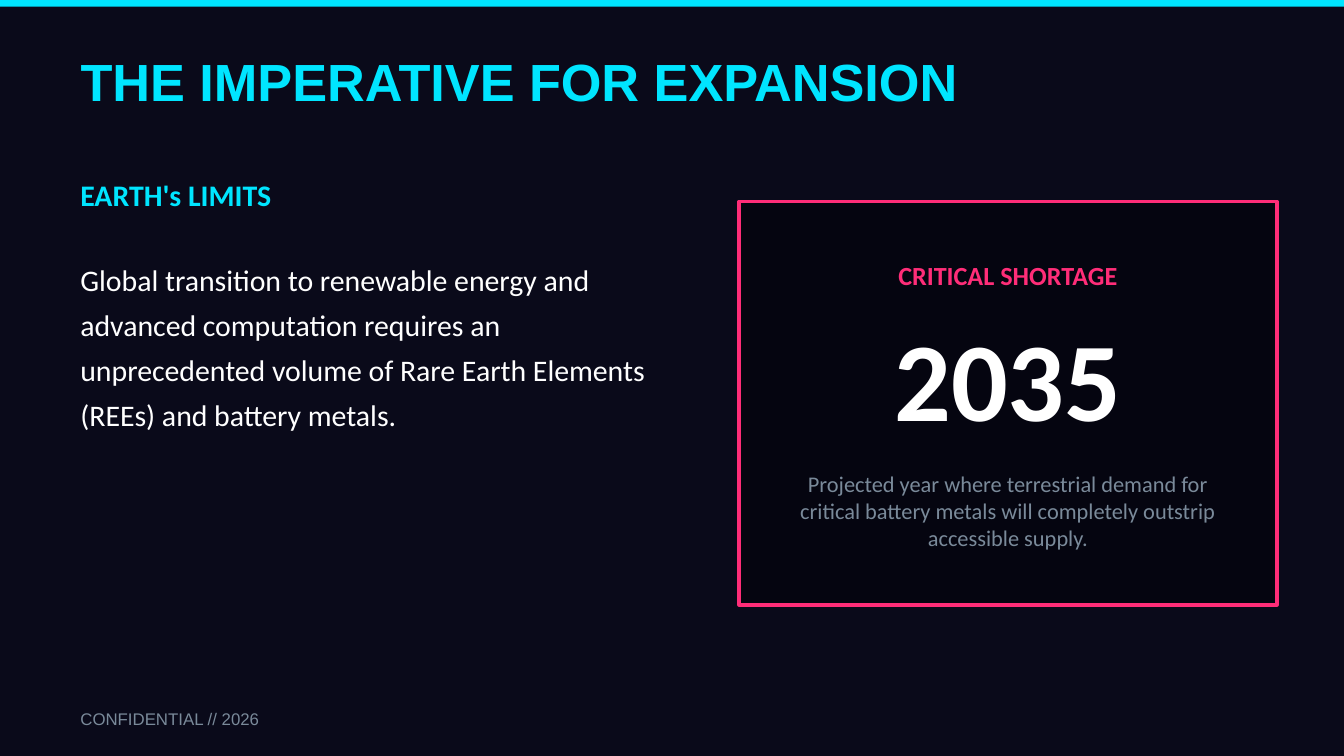
from pptx import Presentation
from pptx.dml.color import RGBColor
from pptx.enum.shapes import MSO_SHAPE as Shape
from pptx.enum.text import MSO_ANCHOR as Anchor, MSO_AUTO_SIZE as AutoSize, PP_ALIGN as Align
from pptx.util import Inches, Pt

COLORS = {
    "night": "0A0A1A",
    "card": "050510",
    "cyan": "00E5FF",
    "pink": "FF2D78",
    "white": "FFFFFF",
    "gray": "7A8A9A",
}


def color(name):
    return RGBColor.from_string(COLORS[name])


def write(box, text, font, size, tone, bold=False, align=Align.LEFT):
    frame = box.text_frame
    frame.text = text
    frame.word_wrap = True
    frame.auto_size = AutoSize.NONE
    frame.vertical_anchor = Anchor.MIDDLE
    para = frame.paragraphs[0]
    para.alignment = align
    span = para.runs[0]
    span.font.name = font
    span.font.size = Pt(size)
    span.font.bold = bold
    span.font.color.rgb = color(tone)
    return para


deck = Presentation()
deck.slide_width = Inches(10)
deck.slide_height = Inches(10 * 9 / 16)
page = deck.slides.add_slide(deck.slide_layouts[5])
page.background.fill.solid()
page.background.fill.fore_color.rgb = color("night")

top_bar = page.shapes.add_shape(Shape.RECTANGLE, 0, 0, Inches(10), Inches(0.05))
card = page.shapes.add_shape(Shape.RECTANGLE, Inches(5.5), Inches(1.5), Inches(4), Inches(3))
for panel, fill in [(top_bar, "cyan"), (card, "card")]:
    panel.shadow.inherit = False
    panel.fill.solid()
    panel.fill.fore_color.rgb = color(fill)
top_bar.line.fill.background()
card.line.color.rgb = color("pink")
card.line.width = Pt(2)

title = page.shapes.title
title.left, title.top, title.width, title.height = Inches(0.5), Inches(0.3), Inches(9), Inches(0.6)
write(title, "THE IMPERATIVE FOR EXPANSION", "Arial", 28, "cyan", True)

body = page.shapes.add_textbox(Inches(0.5), Inches(1.8), Inches(4.5), Inches(1.5))
para = write(
    body,
    "Global transition to renewable energy and advanced computation requires an "
    "unprecedented volume of Rare Earth Elements (REEs) and battery metals.",
    "Calibri", 16, "white",
)
para.line_spacing = Pt(24)

labels = [
    (0.5, 1.2, 5, 0.5, "EARTH's LIMITS", "Calibri", 16, "cyan", True, Align.LEFT),
    (5.5, 1.8, 4, 0.5, "CRITICAL SHORTAGE", "Calibri", 14, "pink", True, Align.CENTER),
    (5.5, 2.3, 4, 1, "2035", "Calibri", 60, "white", True, Align.CENTER),
    (5.8, 3.3, 3.4, 1,
     "Projected year where terrestrial demand for critical battery metals "
     "will completely outstrip accessible supply.",
     "Calibri", 12, "gray", False, Align.CENTER),
    (0.5, 5.2, 5, 0.3, "CONFIDENTIAL // 2026", "Arial", 9, "gray", False, Align.LEFT),
]
for left, top, width, height, *content in labels:
    box = page.shapes.add_textbox(Inches(left), Inches(top), Inches(width), Inches(height))
    write(box, *content)

deck.save("out.pptx")
